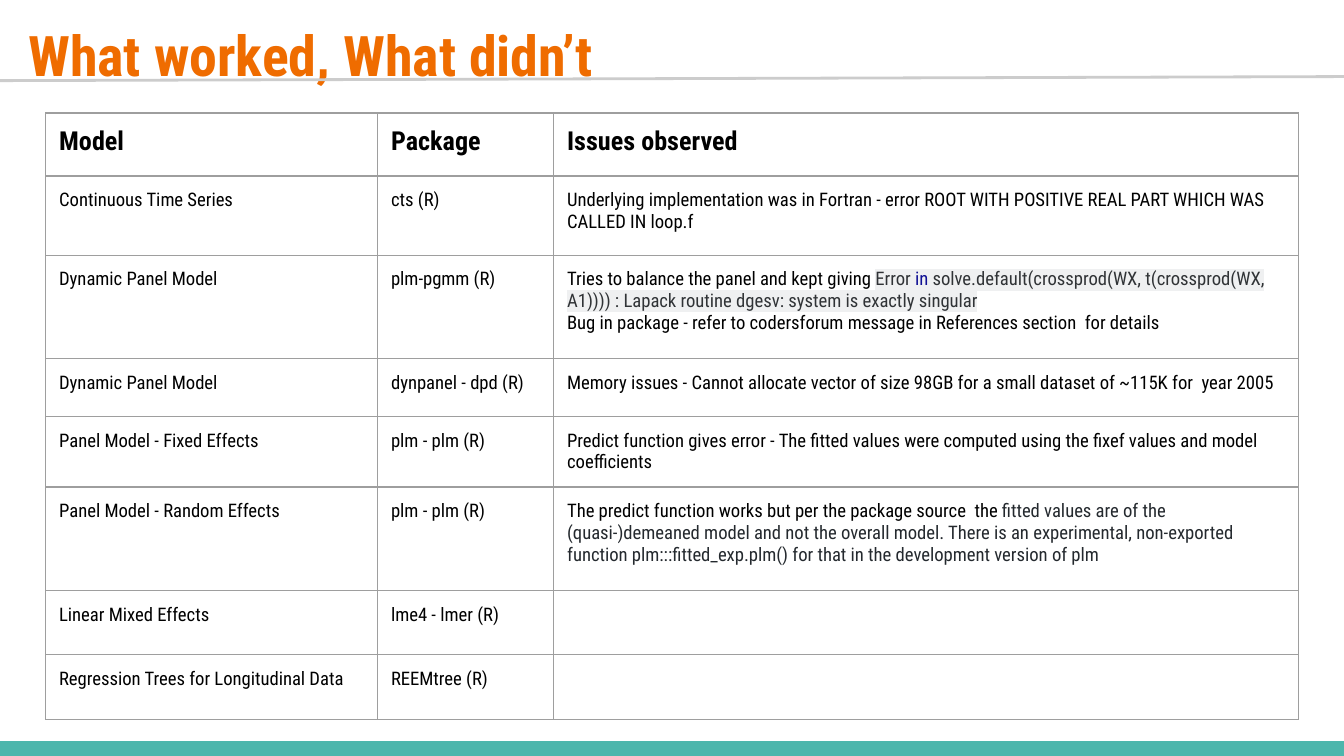
import pptx
import pptx.dml.color
import pptx.enum.shapes
import pptx.enum.text
import pptx.oxml.ns
import pptx.util
from lxml import etree

RGBColor = pptx.dml.color.RGBColor
Inches = pptx.util.Inches
Pt = pptx.util.Pt

FONT = "Roboto Condensed"
ORANGE = RGBColor(0xEF, 0x6C, 0x00)
TEAL = RGBColor(0x4D, 0xB6, 0xAC)
RULE_GREY = RGBColor(0xCC, 0xCC, 0xCC)
BORDER_GREY = RGBColor(0x9E, 0x9E, 0x9E)
BLACK = RGBColor(0x00, 0x00, 0x00)
CODE_GREY = RGBColor(0x30, 0x33, 0x36)
KEYWORD_BLUE = RGBColor(0x10, 0x10, 0x94)
CODE_BACK = RGBColor(0xEF, 0xF0, 0xF1)
QUOTE_GREY = RGBColor(0x24, 0x29, 0x2E)

SLIDE_WIDTH = Inches(10)
SLIDE_HEIGHT = SLIDE_WIDTH * 9 // 16
MARGIN = Inches(0.1)
COLUMN_WIDTHS = [2.47, 1.31, 5.54]
ROW_HEIGHTS = [0.47, 0.59, 0.77, 0.43, 0.52, 0.77, 0.48, 0.48]

# An issue is a list of paragraphs; a paragraph is a list of
# (text, colour, highlight) runs.
SINGULAR_ISSUE = [
    [
        ("Tries to balance the panel and kept giving ", BLACK, None),
        ("Error ", CODE_GREY, CODE_BACK),
        ("in", KEYWORD_BLUE, CODE_BACK),
        (" solve.default(crossprod(WX, t(crossprod(WX, A1)))) : "
         "Lapack routine dgesv: system is exactly singular", CODE_GREY, CODE_BACK),
    ],
    [("Bug in package - refer to codersforum message in References section  "
      "for details", BLACK, None)],
]
PREDICT_ISSUE = [[
    ("The predict function works but per the package source  the ", BLACK, None),
    ("fitted values are of the (quasi-)demeaned model and not the overall model. "
     "There is an experimental, non-exported function plm:::fitted_exp.plm() "
     "for that in the development version of plm", QUOTE_GREY, None),
]]
MODELS = [
    ("Model", "Package", "Issues observed"),
    ("Continuous Time Series", "cts (R)",
     "Underlying implementation was in Fortran - error ROOT WITH POSITIVE REAL PART "
     "WHICH WAS CALLED IN loop.f"),
    ("Dynamic Panel Model", "plm-pgmm (R)", SINGULAR_ISSUE),
    ("Dynamic Panel Model", "dynpanel - dpd (R)",
     "Memory issues - Cannot allocate vector of size 98GB for a small dataset of "
     "~115K for  year 2005"),
    ("Panel Model - Fixed Effects", "plm - plm (R)",
     "Predict function gives error - The fitted values were computed using the fixef "
     "values and model coefficients"),
    ("Panel Model - Random Effects", "plm - plm (R)", PREDICT_ISSUE),
    ("Linear Mixed Effects", "lme4 - lmer (R)", ""),
    ("Regression Trees for Longitudinal Data", "REEMtree (R)", ""),
]


def style_paragraph(paragraph, size, colour, bold):
    font = paragraph.font
    font.name, font.size, font.bold = FONT, Pt(size), bold
    font.color.rgb = colour


def add_fill(parent, tag, colour):
    """Append a tag holding an RGB colour to an XML element."""
    fill = etree.SubElement(parent, pptx.oxml.ns.qn(tag))
    etree.SubElement(fill, pptx.oxml.ns.qn("a:srgbClr"), val=str(colour))


def border_cell(cell):
    properties = cell._tc.get_or_add_tcPr()
    for position, side in enumerate(("a:lnL", "a:lnR", "a:lnT", "a:lnB")):
        border = etree.Element(pptx.oxml.ns.qn(side), w=str(Pt(0.75)))
        add_fill(border, "a:solidFill", BORDER_GREY)
        properties.insert(position, border)


def write_cell(cell, content, is_header):
    cell.margin_left = cell.margin_right = MARGIN
    cell.margin_top = cell.margin_bottom = MARGIN
    cell.fill.background()
    border_cell(cell)
    paragraphs = [[(content, BLACK, None)]] if isinstance(content, str) else content
    for index, runs in enumerate(paragraphs):
        frame = cell.text_frame
        paragraph = frame.add_paragraph() if index else frame.paragraphs[0]
        style_paragraph(paragraph, 14 if is_header else 10, BLACK, is_header)
        for text, colour, highlight in runs:
            if not text:
                continue
            run = paragraph.add_run()
            run.text = text
            if colour != BLACK:
                run.font.color.rgb = colour
            if highlight is not None:
                add_fill(run._r.get_or_add_rPr(), "a:highlight", highlight)


def add_model_table(slide):
    table = slide.shapes.add_table(
        len(MODELS), len(COLUMN_WIDTHS), Inches(0.34), Inches(0.84),
        Inches(sum(COLUMN_WIDTHS)), Inches(sum(ROW_HEIGHTS))).table
    table.first_row = table.horz_banding = False
    for column, width in zip(table.columns, COLUMN_WIDTHS):
        column.width = Inches(width)
    for row_number, (row, height) in enumerate(zip(table.rows, ROW_HEIGHTS)):
        row.height = Inches(height)
        for cell, content in zip(row.cells, MODELS[row_number]):
            write_cell(cell, content, row_number == 0)


def write_title(slide, text):
    title = slide.shapes.title
    title.left, title.top = Inches(0.11), Inches(0.05)
    title.width, title.height = Inches(9.32), Inches(0.51)
    frame = title.text_frame
    frame.auto_size = pptx.enum.text.MSO_AUTO_SIZE.NONE
    frame.vertical_anchor = pptx.enum.text.MSO_ANCHOR.TOP
    frame.margin_left = frame.margin_right = MARGIN
    frame.margin_top = frame.margin_bottom = MARGIN
    frame.text = text
    heading = frame.paragraphs[0]
    heading.alignment = pptx.enum.text.PP_ALIGN.LEFT
    style_paragraph(heading, 30, ORANGE, True)


def add_title_rule(slide):
    rule = slide.shapes.add_connector(
        pptx.enum.shapes.MSO_CONNECTOR.STRAIGHT,
        0, Inches(0.6), Inches(10.01), Inches(0.57))
    rule.line.color.rgb = RULE_GREY
    rule.line.width = Pt(1.5)
    etree.SubElement(rule._element.spPr, pptx.oxml.ns.qn("a:effectLst"))


def add_bottom_band(slide):
    height = Inches(0.11)
    band = slide.shapes.add_shape(
        pptx.enum.shapes.MSO_SHAPE.RECTANGLE,
        0, SLIDE_HEIGHT - height, SLIDE_WIDTH, height)
    band.shadow.inherit = False
    band.fill.solid()
    band.fill.fore_color.rgb = TEAL
    band.line.fill.background()


def main():
    deck = pptx.Presentation()
    deck.slide_width, deck.slide_height = SLIDE_WIDTH, SLIDE_HEIGHT
    slide = deck.slides.add_slide(deck.slide_layouts.get_by_name("Title Only"))
    add_bottom_band(slide)
    write_title(slide, "What worked, What didn’t")
    add_title_rule(slide)
    add_model_table(slide)
    deck.save("out.pptx")


if __name__ == "__main__":
    main()
